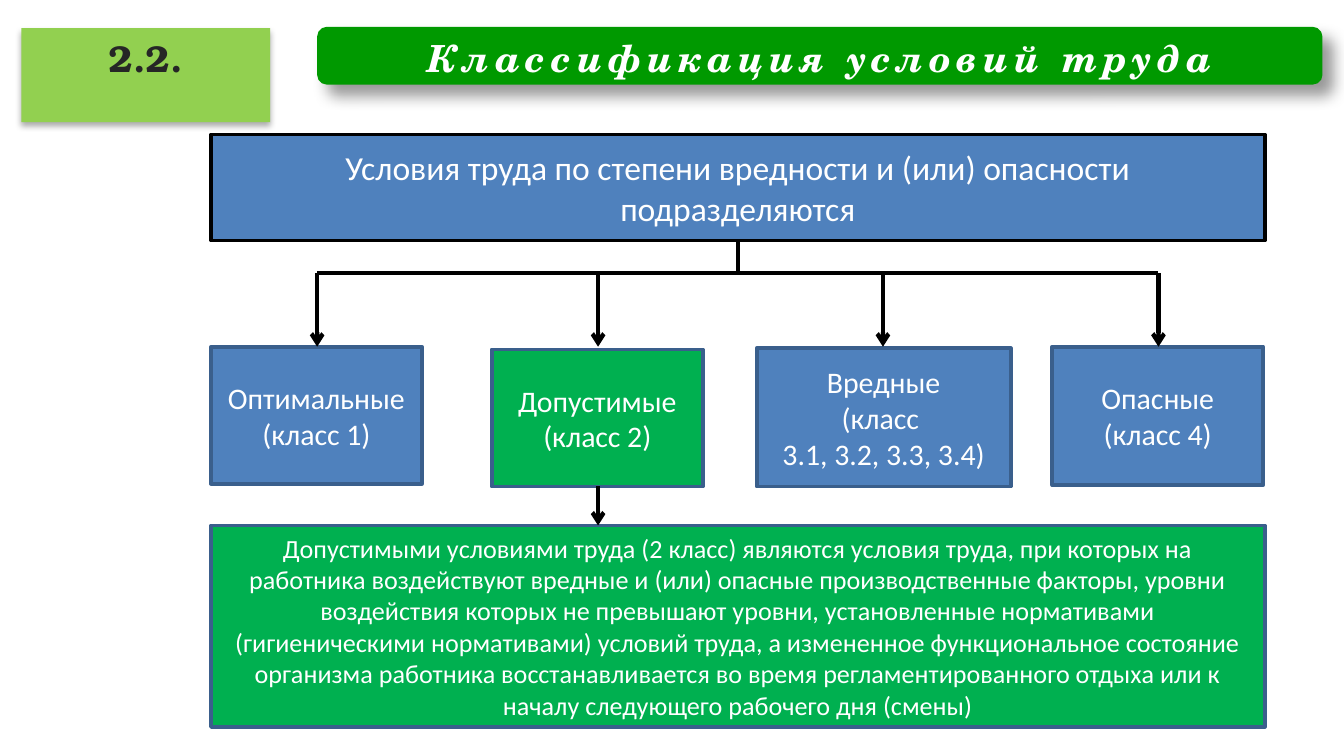
from lxml.etree import SubElement
from pptx import Presentation
from pptx.dml.color import RGBColor
from pptx.enum.shapes import MSO_CONNECTOR, MSO_SHAPE
from pptx.enum.text import MSO_ANCHOR, MSO_AUTO_SIZE, PP_ALIGN
from pptx.oxml.ns import qn
from pptx.util import Inches, Pt

COLORS = {
    "black": "000000",
    "white": "FFFFFF",
    "ink": "262626",
    "lime": "92D050",
    "title": "009900",
    "blue": "4F81BD",
    "green": "00B050",
    "border": "3A5F8C",
}

HEADING = "Условия труда по степени вредности и (или) опасности подразделяются"
DEFINITION = (
    "Допустимыми условиями труда (2 класс) являются условия труда, при которых "
    "на работника воздействуют вредные и (или) опасные производственные факторы, "
    "уровни воздействия которых не превышают уровни, установленные нормативами "
    "(гигиеническими нормативами) условий труда, а измененное функциональное "
    "состояние организма работника восстанавливается во время регламентированного "
    "отдыха или к началу следующего рабочего дня (смены)"
)
CLASSES = [
    ("Оптимальные (класс 1)", (1.57, 2.58, 1.57, 1.02), "blue"),
    ("Допустимые (класс 2)", (3.66, 2.6, 1.57, 1.02), "green"),
    ("Вредные\n(класс \n3.1, 3.2, 3.3, 3.4)", (5.63, 2.59, 1.89, 1.03), "blue"),
    ("Опасные (класс 4)", (7.83, 2.58, 1.57, 1.03), "blue"),
]
TITLE_BOUNDS = (2.36, 0.2, 7.48, 0.43)
CENTER = 5.49
BRANCH_TOP = 2.03
BRANCH_BOTTOM = 2.58
BRANCHES = [2.36, 4.45, 6.57, 8.62]


def rgb(name):
    return RGBColor.from_string(COLORS[name])


def write_text(box, text, size, font="Calibri", color="white", bold=False, italic=False):
    frame = box.text_frame
    frame.text = text
    frame.word_wrap = True
    frame.vertical_anchor = MSO_ANCHOR.MIDDLE
    for para in frame.paragraphs:
        para.alignment = PP_ALIGN.CENTER
        para.font.name = font
        para.font.size = Pt(size)
        para.font.bold = bold
        para.font.italic = italic
        para.font.color.rgb = rgb(color)


def add_shadow(box, opacity, blur, distance, angle):
    effects = box.element.spPr.find(qn("a:effectLst"))
    shadow = SubElement(
        effects,
        qn("a:outerShdw"),
        blurRad=str(Pt(blur)),
        dist=str(Pt(distance)),
        dir=str(angle * 60000),
        algn="tl",
        rotWithShape="0",
    )
    color = SubElement(shadow, qn("a:srgbClr"), val=COLORS["black"])
    SubElement(color, qn("a:alpha"), val=str(opacity * 1000))


def add_box(page, bounds, fill, border=None, preset=MSO_SHAPE.RECTANGLE):
    box = page.shapes.add_shape(preset, *map(Inches, bounds))
    box.shadow.inherit = False
    box.fill.solid()
    box.fill.fore_color.rgb = rgb(fill)
    if border:
        box.line.color.rgb = rgb(border)
        box.line.width = Pt(2)
    else:
        box.line.fill.background()
    return box


def add_text_box(page, text, bounds, fill, border, size):
    box = add_box(page, bounds, fill, border)
    write_text(box, text, size)


def add_number(page):
    box = add_box(page, (0.16, 0.21, 1.85, 0.7), "lime")
    add_shadow(box, 32, 3.5, 2.2, 90)
    write_text(box, "2.2.", 20, "TeX Gyre Bonum", "ink", bold=True)
    box.text_frame.word_wrap = False
    box.text_frame.vertical_anchor = MSO_ANCHOR.TOP


def add_title(page):
    title = page.shapes.title
    banner = add_box(page, TITLE_BOUNDS, "title", preset=MSO_SHAPE.ROUNDED_RECTANGLE)
    add_shadow(banner, 40, 8, 8, 45)
    title.element.addprevious(banner.element)
    title.left, title.top, title.width, title.height = map(Inches, TITLE_BOUNDS)
    write_text(title, "Классификация условий труда", 20, "TeX Gyre Schola", bold=True, italic=True)
    frame = title.text_frame
    frame.auto_size = MSO_AUTO_SIZE.NONE
    frame.margin_left = frame.margin_right = Inches(0.1)
    frame.margin_top = Inches(0.08)
    frame.margin_bottom = Inches(0.05)
    span = frame.paragraphs[0].runs[0]
    span.font._element.set("spc", "300")


def add_line(page, start, end, arrow=False):
    line = page.shapes.add_connector(
        MSO_CONNECTOR.STRAIGHT, *map(Inches, (*start, *end))
    )
    line.line.color.rgb = rgb("black")
    line.line.width = Pt(2.25)
    if arrow:
        SubElement(line.line._get_or_add_ln(), qn("a:tailEnd"), type="arrow")
    SubElement(line.element.spPr, qn("a:effectLst"))


def add_branches(page):
    add_line(page, (CENTER, 1.79), (CENTER, BRANCH_TOP))
    for edge in (BRANCHES[-1], BRANCHES[0]):
        add_line(page, (CENTER, BRANCH_TOP), (edge, BRANCH_TOP))
    for x in BRANCHES:
        add_line(page, (x, BRANCH_TOP), (x, BRANCH_BOTTOM), arrow=True)


def main():
    deck = Presentation()
    deck.slide_width = Inches(10)
    deck.slide_height = deck.slide_width * 9 // 16
    page = deck.slides.add_slide(deck.slide_layouts[5])
    add_title(page)
    add_number(page)
    add_text_box(page, HEADING, (1.57, 1, 7.84, 0.79), "blue", "black", 18)
    for text, bounds, fill in CLASSES:
        add_text_box(page, text, bounds, fill, "border", 16)
    add_branches(page)
    add_text_box(page, DEFINITION, (1.57, 3.91, 7.84, 1.5), "green", "border", 14)
    add_line(page, (BRANCHES[1], 3.62), (BRANCHES[1], 3.91), arrow=True)
    deck.save("out.pptx")


if __name__ == "__main__":
    main()
